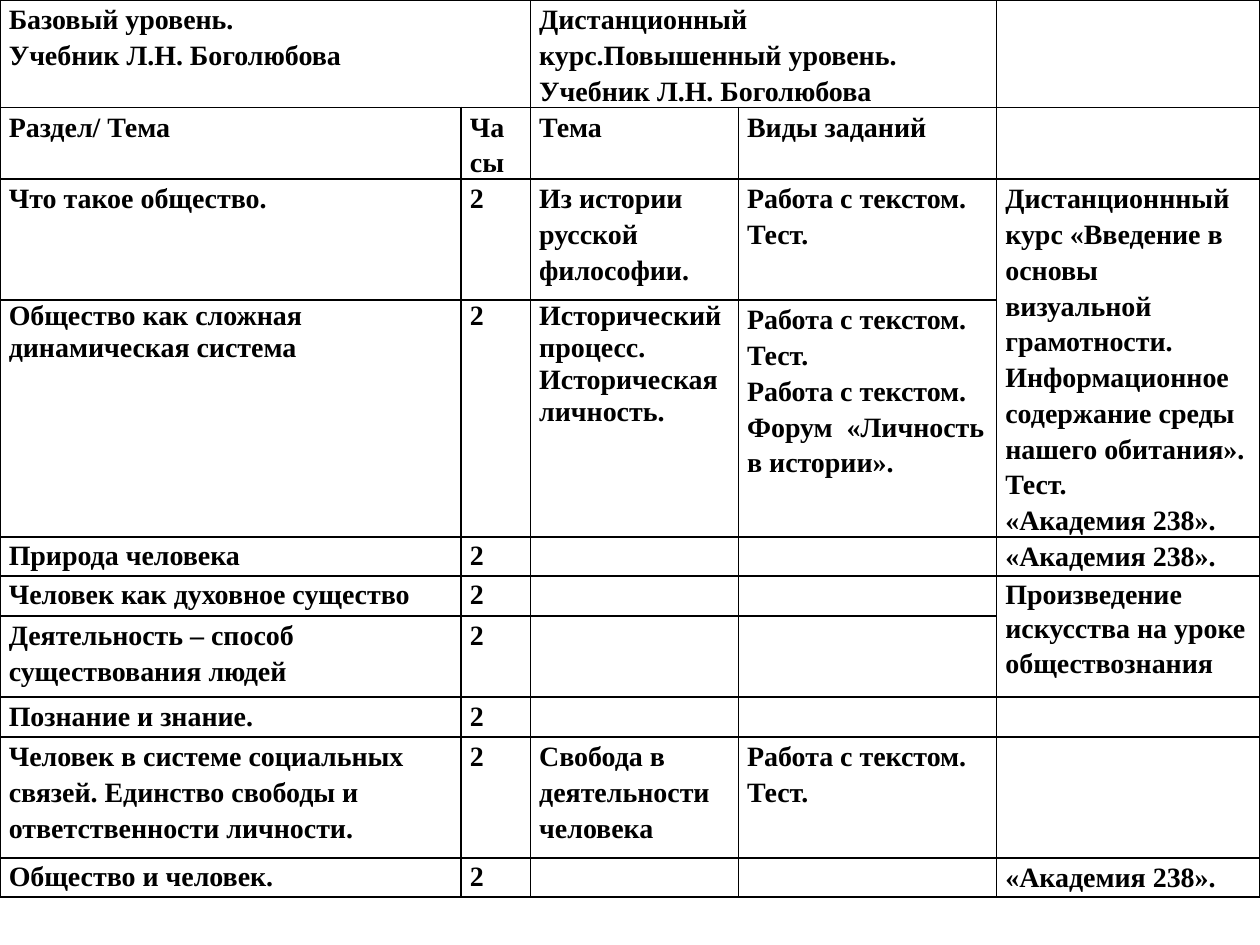
from lxml.etree import SubElement
from pptx import Presentation
from pptx.dml.color import RGBColor
from pptx.oxml.ns import qn
from pptx.util import Inches, Pt

FONT = "Times New Roman"
INK, PAPER = "000000", "FFFFFF"

COLUMN_WIDTHS = [3.66, 0.55, 1.65, 2.05, 2.09]
ROW_HEIGHTS = [0.85, 0.57, 0.96, 1.87, 0.31, 0.32, 0.64, 0.32, 0.96, 0.31]

# A line break separates paragraphs inside a cell
ROWS = [
    ["Базовый уровень.\nУчебник Л.Н. Боголюбова", "",
     "Дистанционный курс.Повышенный уровень. Учебник Л.Н. Боголюбова", "", ""],
    ["Раздел/ Тема", "Ча\nсы", "Тема", "Виды заданий", ""],
    ["Что такое общество.", "2", "Из истории русской философии.",
     "Работа с текстом.\nТест.",
     "Дистанционнный курс «Введение в основы визуальной грамотности. "
     "Информационное содержание среды нашего обитания». Тест.\n«Академия 238»."],
    ["Общество как сложная динамическая система", "2",
     "Исторический процесс. Историческая личность.",
     "Работа с текстом. Тест.\nРабота с текстом. Форум  «Личность в истории».", ""],
    ["Природа человека", "2", "", "", "«Академия 238»."],
    ["Человек как духовное существо", "2", "", "",
     "Произведение искусства на уроке обществознания"],
    ["Деятельность – способ существования людей", "2", "", "", ""],
    ["Познание и знание.", "2", "", "", ""],
    ["Человек в системе социальных связей. Единство свободы и "
     "ответственности личности.", "2", "Свобода в деятельности человека",
     "Работа с текстом.\nТест.", ""],
    ["Общество и человек.", "2", "", "", "«Академия 238»."],
]

# First and last cell of each merged area
MERGES = [((0, 0), (0, 1)), ((0, 2), (0, 3)), ((2, 4), (3, 4)), ((5, 4), (6, 4))]

# Line spacing: the first three columns of some rows are tighter
LINE_SPACING = 1.15
TIGHT_ROWS = {3: 1.03, 4: 1.11, 5: 1.11, 9: 1.1}
TIGHT_CELLS = {(5, 4): 1.11}


def color(hex_string):
    return RGBColor.from_string(hex_string)


def line_spacing(row, column):
    if column < 3:
        return TIGHT_ROWS.get(row, LINE_SPACING)
    return TIGHT_CELLS.get((row, column), LINE_SPACING)


def set_borders(cell, width=Pt(1)):
    properties = cell._tc.get_or_add_tcPr()
    for side in ("a:lnL", "a:lnR", "a:lnT", "a:lnB"):
        line = SubElement(properties, qn(side), w=str(width))
        fill = SubElement(line, qn("a:solidFill"))
        SubElement(fill, qn("a:srgbClr"), val=INK)


def format_cell(cell):
    cell.margin_left = cell.margin_right = Inches(0.07)
    cell.margin_top = cell.margin_bottom = 0
    set_borders(cell)
    cell.fill.solid()
    cell.fill.fore_color.rgb = color(PAPER)


def write_cell(cell, text, spacing):
    cell.text_frame.text = text
    for paragraph in cell.text_frame.paragraphs:
        paragraph.line_spacing = spacing
        for run in paragraph.runs:
            run.font.name = FONT
            run.font.size = Pt(16)
            run.font.bold = True
            run.font.color.rgb = color(INK)


def add_plan_table(slide):
    frame = slide.shapes.add_table(
        len(ROWS), len(COLUMN_WIDTHS), 0, 0,
        Inches(sum(COLUMN_WIDTHS)), Inches(sum(ROW_HEIGHTS)))
    table = frame.table
    table.first_row = table.horz_banding = False
    for column, width in zip(table.columns, COLUMN_WIDTHS):
        column.width = Inches(width)
    for row, height in zip(table.rows, ROW_HEIGHTS):
        row.height = Inches(height)
    for first, last in MERGES:
        table.cell(*first).merge(table.cell(*last))
    for row, texts in enumerate(ROWS):
        for column, text in enumerate(texts):
            cell = table.cell(row, column)
            format_cell(cell)
            if text:
                write_cell(cell, text, line_spacing(row, column))


def main():
    presentation = Presentation()
    presentation.slide_width = Inches(10)
    presentation.slide_height = Inches(7.5)
    # Blank layout: the table fills the slide
    slide = presentation.slides.add_slide(presentation.slide_layouts[6])
    add_plan_table(slide)
    presentation.save("out.pptx")


if __name__ == "__main__":
    main()
